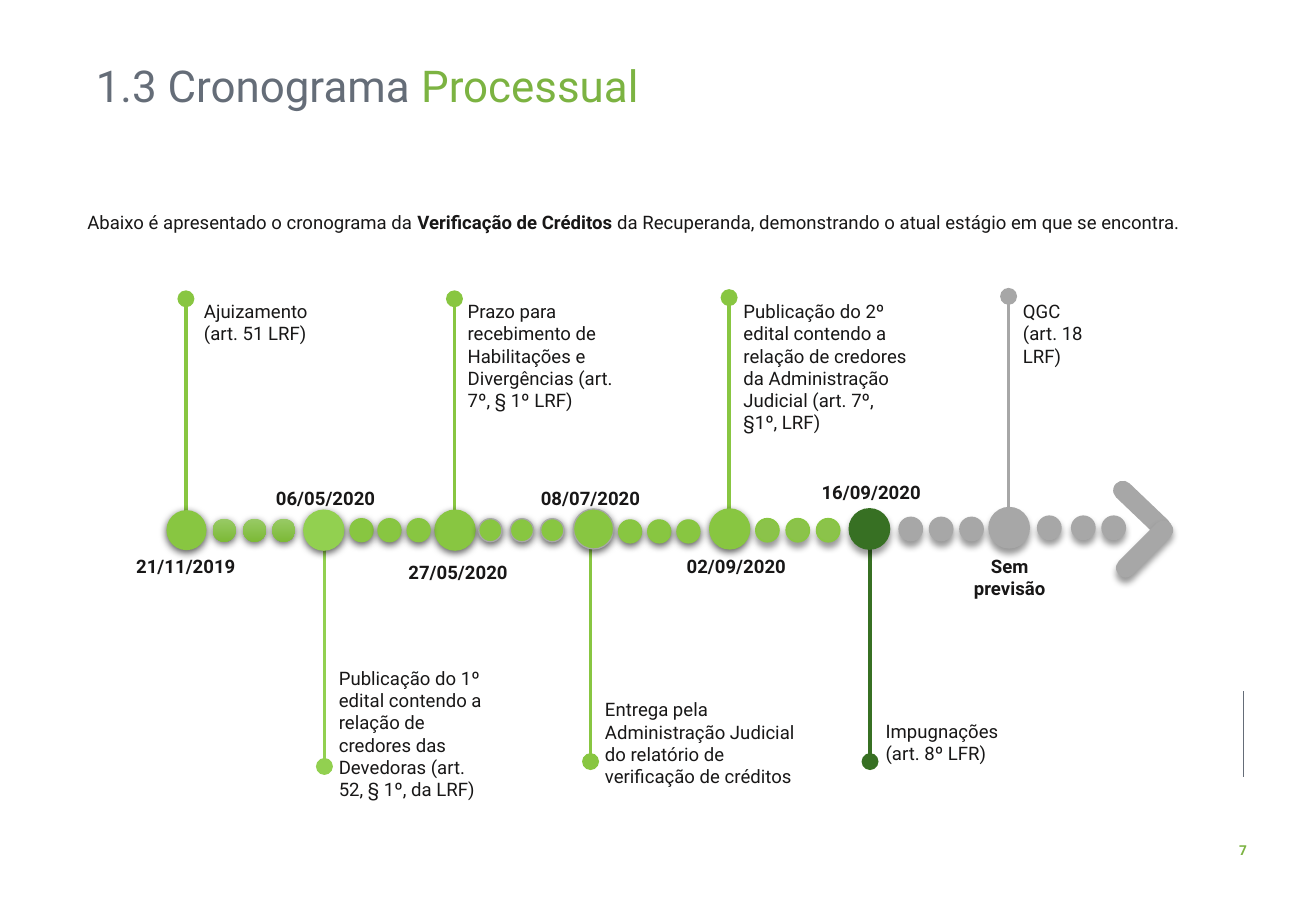
from lxml.etree import SubElement
from pptx import Presentation
from pptx.dml.color import RGBColor
from pptx.enum.shapes import MSO_CONNECTOR, MSO_SHAPE
from pptx.enum.text import MSO_ANCHOR, PP_ALIGN
from pptx.oxml.ns import qn
from pptx.util import Emu, Pt

PX = 9144  # EMU per px, 100 px to the inch
FONT = "Roboto"
INK = RGBColor(0x18, 0x17, 0x17)
SLATE = RGBColor(0x65, 0x6D, 0x78)
ACCENT = RGBColor(0x7C, 0xB3, 0x42)
GREEN = RGBColor(0x88, 0xC6, 0x41)
LIME = RGBColor(0x92, 0xD0, 0x50)
LEAF = RGBColor(0x8B, 0xC3, 0x4A)
FOREST = RGBColor(0x37, 0x70, 0x23)
GREY = RGBColor(0xA7, 0xA7, 0xA7)
GRADIENT = (RGBColor(0x98, 0xCA, 0x65), RGBColor(0x7C, 0xB9, 0x36))

# Shadows: opacity %, blur pt, distance pt
TIGHT = (63, 4.5, 1.5)
LOOSE = (40, 4, 3)

TITLE = [("1.3 Cronograma ", SLATE, False), ("Processual", ACCENT, False)]
INTRO = [
    ("Abaixo é apresentado o cronograma da ", INK, False),
    ("Verificação de Créditos ", INK, True),
    ("da Recuperanda, demonstrando o atual estágio em que se encontra.", INK, False),
]

# Date, date centre x, date top, stem x, stem tip y, circle left, circle top,
# fill, outline, outline pt, shadow, description lines, description box
MILESTONES = [
    ("21/11/2019", 153, 452, 153, 246, 137, 420, GREEN, None, 0, TIGHT,
     ["Ajuizamento (art. 51 LRF)"], (158, 242, 112, 47)),
    ("06/05/2020", 268, 396, 267, 631, 250, 420, LIME, LIME, 0.75, TIGHT,
     ["Publicação do 1º edital contendo a relação de credores das Devedoras "
      "(art. 52, § 1º, da LRF)"], (269, 544, 143, 84)),
    ("27/05/2020", 377, 457, 374, 246, 358, 420, GREEN, GREEN, 0.75, TIGHT,
     ["Prazo para recebimento de Habilitações e Divergências (art. 7º, § 1º LRF)"],
     (375, 242, 160, 66)),
    ("08/07/2020", 486, 396, 486, 627, 472, 419, GREEN, GREY, 0.75, TIGHT,
     ["Entrega pela Administração Judicial do relatório de verificação de créditos"],
     (488, 570, 178, 66)),
    ("02/09/2020", 606, 452, 600, 245, 584, 419, GREEN, GREEN, 0.75, TIGHT,
     ["Publicação do 2º edital contendo a relação de credores da Administração "
      "Judicial (art. 7º, §1º, LRF)"], (602, 242, 157, 84)),
    ("16/09/2020", 717, 391, 716, 627, 699, 419, FOREST, FOREST, 1, LOOSE,
     ["Impugnações (art. 8º LFR)"], (719, 588, 124, 47)),
    ("Sem previsão", 831, 452, 830, 244, 814, 418, GREY, GREY, 1, LOOSE,
     ["QGC", "(art. 18 LRF)"], (832, 242, 79, 47)),
]
CIRCLE, DOT, DATE_WIDTH = 33, 19, 106

# Lefts, top, fill, outline, outline pt, shadow
DOT_GROUPS = [
    ((175, 200, 224), 427, GRADIENT, None, 0, TIGHT),
    ((288, 311, 335), 427, GREEN, GREEN, 0.75, TIGHT),
    ((394, 420, 445), 427, GREEN, GREY, 0.75, TIGHT),
    ((509, 533, 557), 428, GREEN, GREEN, 0.75, TIGHT),
    ((622, 647, 672), 427, LEAF, GREEN, 1, LOOSE),
    ((740, 765, 790), 426, GREY, GREY, 1, LOOSE),
    ((854, 882, 907), 425, GREY, GREY, 1, LOOSE),
]
# Box, rotation, shadow
ARROW_BARS = [((910, 411, 60, 16), 43.7, None), ((912, 444, 60, 16), 315, LOOSE)]


def px(*lengths):
    return [Emu(length * PX) for length in lengths]


def add_text(box, paragraphs, size, align=PP_ALIGN.LEFT, spacing=None,
             anchor=MSO_ANCHOR.TOP, wrap=True):
    """Each paragraph is a list of (text, colour, bold) runs."""
    frame = slide.shapes.add_textbox(*px(*box)).text_frame
    frame.word_wrap = wrap
    frame.vertical_anchor = anchor
    for index, runs in enumerate(paragraphs):
        paragraph = frame.add_paragraph() if index else frame.paragraphs[0]
        paragraph.alignment = align
        if spacing:
            paragraph.line_spacing = spacing
        paragraph.font.name = FONT
        paragraph.font.size = Pt(size)
        for text, colour, bold in runs:
            run = paragraph.add_run()
            run.text = text
            run.font.color.rgb = colour
            run.font.bold = bold


def add_line(start, end, colour, width, oval=False):
    line = slide.shapes.add_connector(MSO_CONNECTOR.STRAIGHT, *px(*start, *end))
    line.line.color.rgb = colour
    line.line.width = Pt(width)
    if oval:
        SubElement(line.line._get_or_add_ln(), qn("a:headEnd"),
                   type="oval", w="lg", len="lg")
    SubElement(line._element.spPr, qn("a:effectLst"))


def add_solid(kind, box, fill, outline, width, shadow):
    solid = slide.shapes.add_shape(kind, *px(*box))
    if fill is GRADIENT:
        solid.fill.gradient()
        solid.fill.gradient_angle = 270
        for stop, colour in zip(solid.fill.gradient_stops, GRADIENT):
            stop.color.rgb = colour
    else:
        solid.fill.solid()
        solid.fill.fore_color.rgb = fill
    if outline is None:
        solid.line.fill.background()
    else:
        solid.line.color.rgb = outline
        solid.line.width = Pt(width)
    solid.shadow.inherit = False
    if shadow:
        opacity, blur, distance = shadow
        effects = solid._element.spPr.find(qn("a:effectLst"))
        outer = SubElement(effects, qn("a:outerShdw"), blurRad=str(Pt(blur)),
                           dist=str(Pt(distance)), dir="5400000", rotWithShape="0")
        black = SubElement(outer, qn("a:srgbClr"), val="000000")
        SubElement(black, qn("a:alpha"), val=str(opacity * 1000))
    return solid


presentation = Presentation()
presentation.slide_width, presentation.slide_height = px(1083, 750)
slide = presentation.slides.add_slide(presentation.slide_layouts[6])

add_line((1023, 569), (1023, 640), SLATE, 0.5)
add_text((1006, 688, 34, 24), [[("7", ACCENT, True)]], 8.1, PP_ALIGN.CENTER, wrap=False)
add_text((69, 46, 818, 53), [TITLE], 26, spacing=0.9, anchor=MSO_ANCHOR.MIDDLE)
add_text((62, 166, 986, 30), [INTRO], 11, PP_ALIGN.JUSTIFY, spacing=1.14)

for (date, date_x, date_top, stem_x, tip_y, left, top, fill, outline, width, shadow,
     description, description_box) in MILESTONES:
    add_line((stem_x, tip_y), (stem_x, top + CIRCLE // 2), fill, 2, oval=True)
    add_solid(MSO_SHAPE.OVAL, (left, top, CIRCLE, CIRCLE), fill, outline, width, shadow)
    add_text((date_x - DATE_WIDTH // 2, date_top, DATE_WIDTH, 29),
             [[(date, INK, True)]], 11, PP_ALIGN.CENTER)
    add_text(description_box, [[(text, INK, False)] for text in description], 11)

for lefts, top, fill, outline, width, shadow in DOT_GROUPS:
    for left in lefts:
        add_solid(MSO_SHAPE.OVAL, (left, top, DOT, DOT), fill, outline, width, shadow)

for box, rotation, shadow in ARROW_BARS:
    bar = add_solid(MSO_SHAPE.ROUNDED_RECTANGLE, box, GREY, None, 0, shadow)
    bar.adjustments[0] = 0.5
    bar.rotation = rotation

presentation.save("out.pptx")
